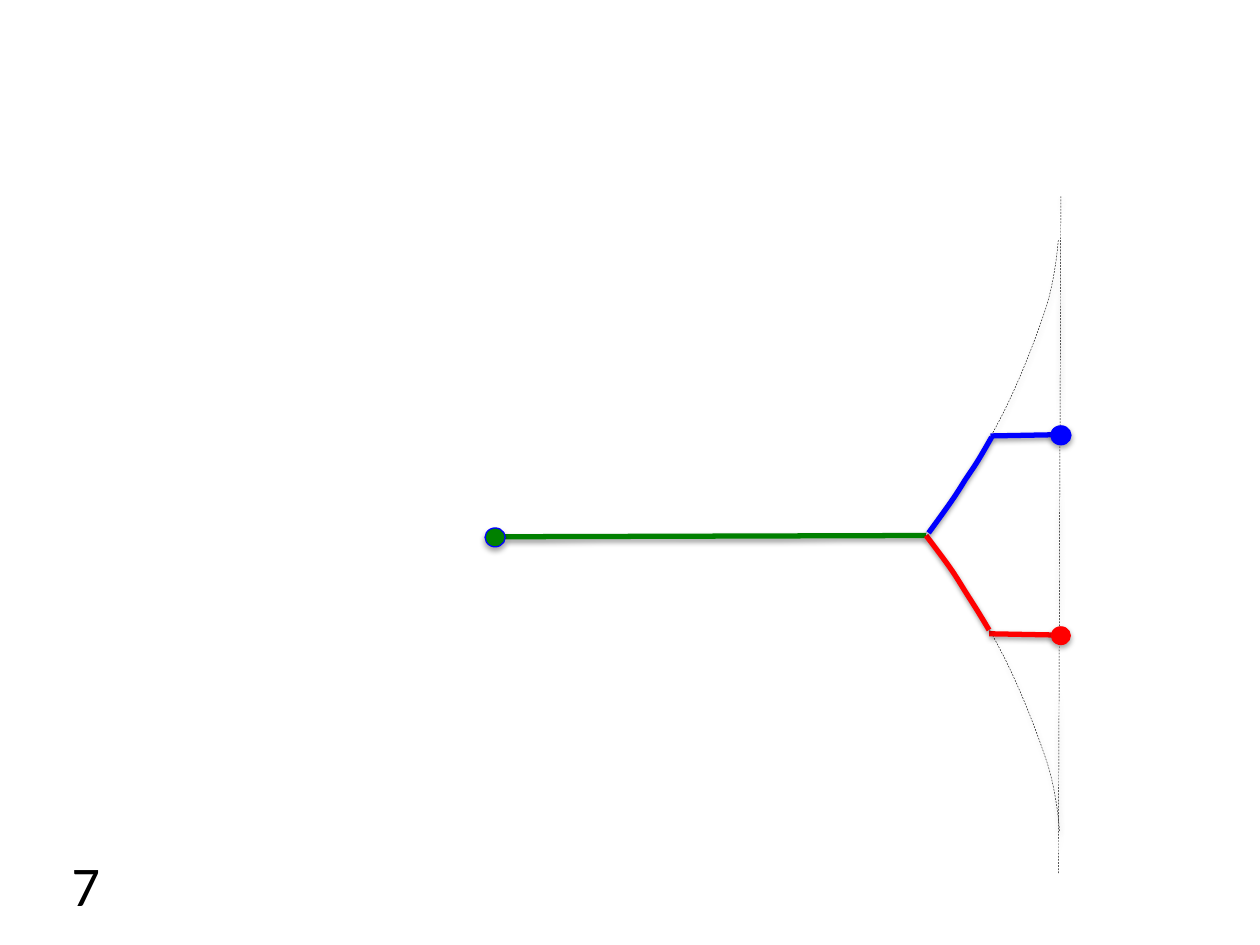
from lxml.etree import SubElement
from pptx import Presentation
from pptx.dml.color import RGBColor
from pptx.enum.dml import MSO_LINE
from pptx.enum.shapes import MSO_CONNECTOR, MSO_SHAPE
from pptx.enum.text import MSO_AUTO_SIZE
from pptx.oxml.ns import qn
from pptx.util import Inches, Pt

THEME = {
    "black": "000000", "blue": "0000FF", "red": "FF0000", "green": "008000",
    "font": "Calibri", "number_size": 32,
    "guide": 0.25, "track": 3, "outline": 0.75,
}
PAGE_NUMBER = "7"
DOT_SIZE = (0.16, 0.15)

# Each curve is a start point followed by cubic segments (control, control, end).
GUIDE_CURVES = [
    [(7.33, 4.26), (7.54, 3.97), (7.76, 3.67), (7.92, 3.36), (8.08, 3.06),
     (8.22, 2.69), (8.3, 2.45), (8.38, 2.2), (8.4, 1.9), (8.4, 1.9)],
    [(7.34, 4.24), (7.56, 4.53), (7.77, 4.83), (7.93, 5.14), (8.09, 5.44),
     (8.23, 5.81), (8.31, 6.05), (8.39, 6.3), (8.41, 6.6), (8.41, 6.6)],
]
GUIDE_LINE = ((8.4, 6.93), (8.42, 1.55))
TRACK_LINES = [
    ((7.86, 3.46), (8.39, 3.45), "blue"),
    ((7.85, 5.03), (8.38, 5.04), "red"),
    ((4.01, 4.26), (7.35, 4.25), "green"),
]
DOTS = [  # left, top, fill, outline
    (8.34, 4.97, "red", None),
    (8.34, 3.38, "blue", "blue"),
    (3.85, 4.19, "green", "blue"),
]
TRACK_CURVES = [
    ([(7.35, 4.25), (7.54, 4.5), (7.56, 4.53), (7.64, 4.66),
      (7.72, 4.79), (7.72, 4.78), (7.85, 5)], "red"),
    ([(7.37, 4.23), (7.56, 3.97), (7.58, 3.94), (7.66, 3.81),
      (7.74, 3.69), (7.74, 3.7), (7.87, 3.47)], "blue"),
]


def color(name):
    return RGBColor.from_string(THEME[name])


def add_shadow(shape, alpha=38, distance=1.6):
    effects = SubElement(shape._element.spPr, qn("a:effectLst"))
    outer = SubElement(effects, qn("a:outerShdw"), blurRad=str(Pt(3.1)),
                       dist=str(Pt(distance)), dir="5400000",
                       algn="ctr", rotWithShape="0")
    tint = SubElement(outer, qn("a:srgbClr"), val=THEME["black"])
    SubElement(tint, qn("a:alpha"), val=str(alpha * 1000))


def style_stroke(shape, name, width, dashed):
    shape.line.color.rgb = color(name)
    shape.line.width = Pt(width)
    if dashed:
        shape.line.dash_style = MSO_LINE.DASH
    add_shadow(shape)


def bend_segments(freeform):
    """Turn every three straight segments into one cubic Bezier segment."""
    corners = list(freeform._element.iter(qn("a:lnTo")))
    outline = corners[0].getparent()
    for first in range(0, len(corners), 3):
        bend = SubElement(outline, qn("a:cubicBezTo"))
        for corner in corners[first:first + 3]:
            bend.append(corner[0])
            outline.remove(corner)


def add_curve(shapes, points, name, width, dashed=False):
    start, *rest = [(Inches(x), Inches(y)) for x, y in points]
    builder = shapes.build_freeform(*start)
    builder.add_line_segments(rest, close=False)
    curve = builder.convert_to_shape()
    bend_segments(curve)
    curve.fill.background()
    style_stroke(curve, name, width, dashed)


def add_line(shapes, start, end, name, width, dashed=False):
    ends = [Inches(value) for value in start + end]
    line = shapes.add_connector(MSO_CONNECTOR.STRAIGHT, *ends)
    style_stroke(line, name, width, dashed)


def add_dot(shapes, left, top, fill, outline):
    dot = shapes.add_shape(MSO_SHAPE.OVAL, *map(Inches, (left, top) + DOT_SIZE))
    dot.fill.solid()
    dot.fill.fore_color.rgb = color(fill)
    if outline:
        dot.line.color.rgb = color(outline)
        dot.line.width = Pt(THEME["outline"])
    else:
        dot.line.fill.background()
    add_shadow(dot, alpha=35, distance=1.8)


def add_text(shapes, text, *, left, top, width, height, size, name):
    box = shapes.add_textbox(*map(Inches, (left, top, width, height)))
    box.text_frame.word_wrap = False
    box.text_frame.auto_size = MSO_AUTO_SIZE.SHAPE_TO_FIT_TEXT
    span = box.text_frame.paragraphs[0].add_run()
    span.text = text
    span.font.name = THEME["font"]
    span.font.size = Pt(size)
    span.font.color.rgb = color(name)


def main():
    deck = Presentation()
    deck.slide_width, deck.slide_height = Inches(10), Inches(7.5)
    page = deck.slides.add_slide(deck.slide_layouts[6])

    for points in GUIDE_CURVES:
        add_curve(page.shapes, points, "black", THEME["guide"], dashed=True)
    add_line(page.shapes, *GUIDE_LINE, "black", THEME["guide"], dashed=True)

    tracks = page.shapes.add_group_shape().shapes
    for start, end, name in TRACK_LINES:
        add_line(tracks, start, end, name, THEME["track"])
    for dot in DOTS:
        add_dot(tracks, *dot)
    for points, name in TRACK_CURVES:
        add_curve(tracks, points, name, THEME["track"])

    add_text(page.shapes, PAGE_NUMBER, left=0.47, top=6.7, width=0.43, height=0.64,
             size=THEME["number_size"], name="black")
    deck.save("out.pptx")


if __name__ == "__main__":
    main()
